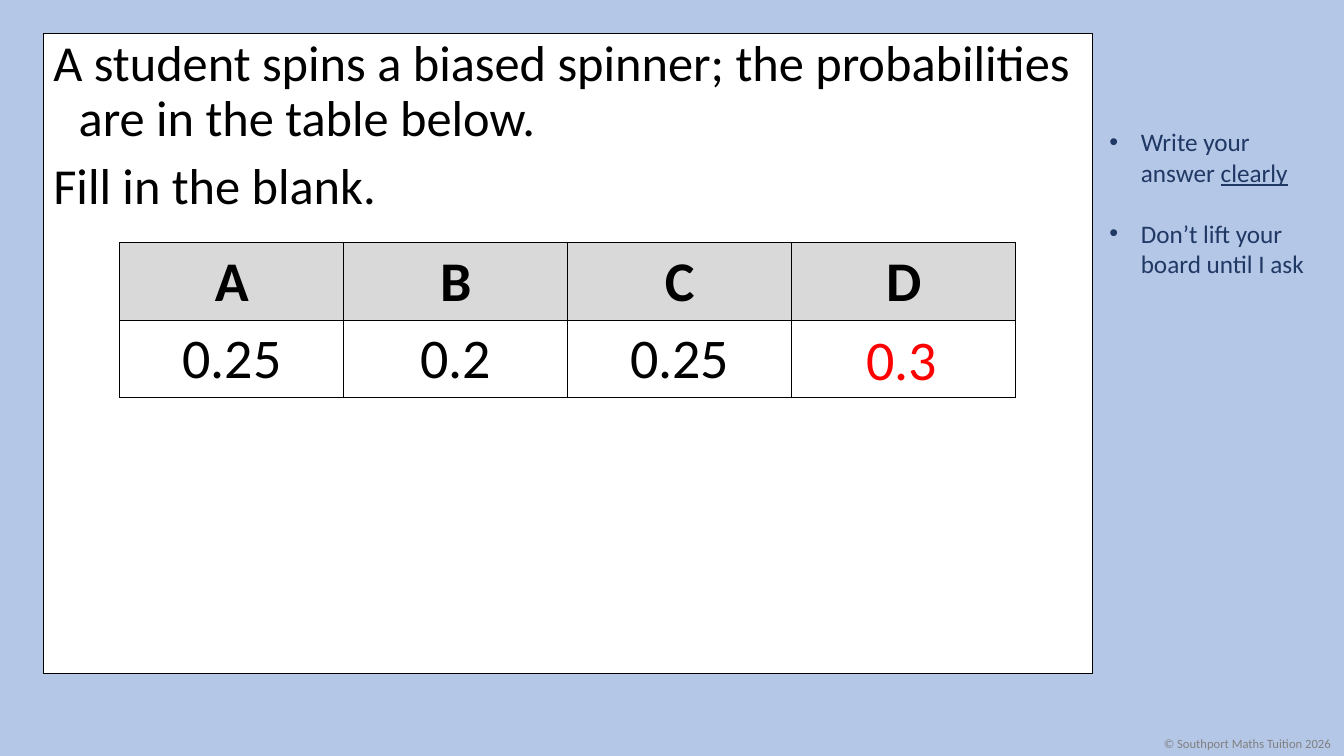
from lxml.etree import SubElement
from pptx import Presentation
from pptx.dml.color import RGBColor
from pptx.enum.shapes import MSO_SHAPE
from pptx.enum.text import MSO_ANCHOR, PP_ALIGN
from pptx.oxml.ns import qn
from pptx.util import Cm, Pt

COLORS = {
    "background": "B4C7E7",
    "panel": "FFFFFF",
    "header": "D9D9D9",
    "text": "000000",
    "reminder": "203864",
    "copyright": "808080",
    "answer": "FF0000",
}
PANEL = (1.09, 0.84, 26.44, 16.13)
SPINNER = [("A", "B", "C", "D"), ("0.25", "0.2", "0.25", "")]


def rgb(name):
    return RGBColor.from_string(COLORS[name])


def set_bullet(p, indent, char=None):
    """Give p a hanging indent in cm, with a bullet if char is given."""
    pPr = p._p.get_or_add_pPr()
    pPr.set("marL", str(Cm(indent)))
    pPr.set("indent", str(-Cm(indent)))
    if char:
        SubElement(pPr, qn("a:buFont"), typeface="Arial")
        SubElement(pPr, qn("a:buChar"), char=char)
    else:
        SubElement(pPr, qn("a:buNone"))


def set_borders(cell):
    tcPr = cell._tc.get_or_add_tcPr()
    for side in ("lnL", "lnR", "lnT", "lnB"):
        ln = SubElement(tcPr, qn(f"a:{side}"), w=str(Pt(1)))
        fill = SubElement(ln, qn("a:solidFill"))
        SubElement(fill, qn("a:srgbClr"), val=COLORS["text"])


class SlideBuilder:
    font = "Calibri"

    def __init__(self, s):
        self.s = s
        fill = s.background.fill
        fill.solid()
        fill.fore_color.rgb = rgb("background")

    def add_run(self, p, text, size, color, **formats):
        r = p.add_run()
        r.text = text
        formats = {"name": self.font, "size": Pt(size), **formats}
        for name, value in formats.items():
            setattr(r.font, name, value)
        r.font.color.rgb = rgb(color)

    def add_panel(self, box):
        """Draw the white board behind the body placeholder."""
        sp = self.s.shapes.add_shape(MSO_SHAPE.RECTANGLE, *map(Cm, box))
        sp.shadow.inherit = False
        sp.fill.solid()
        sp.fill.fore_color.rgb = rgb("panel")
        sp.line.color.rgb = rgb("text")
        sp.line.width = Pt(1)
        self.s.placeholders[1].element.addprevious(sp.element)

    def fill_body(self, box, lines):
        body = self.s.placeholders[1]
        body.left, body.top, body.width, body.height = map(Cm, box)
        tf = body.text_frame
        tf.vertical_anchor = MSO_ANCHOR.TOP
        for i, line in enumerate(lines):
            p = tf.add_paragraph() if i else tf.paragraphs[0]
            set_bullet(p, 0.64)
            p.line_spacing = 0.9
            p.space_before = Pt(10 if i else 0)
            self.add_run(p, line, 36, "text")

    def add_text(self, box, text, size, color, align=PP_ALIGN.LEFT, wrap=True):
        tf = self.s.shapes.add_textbox(*map(Cm, box)).text_frame
        tf.word_wrap = wrap
        p = tf.paragraphs[0]
        p.alignment = align
        self.add_run(p, text, size, color)

    def add_reminders(self, box, reminders):
        """Add a bulleted list; each reminder is a list of (text, underlined)."""
        tf = self.s.shapes.add_textbox(*map(Cm, box)).text_frame
        tf.word_wrap = True
        for i, parts in enumerate(reminders):
            p = tf.add_paragraph() if i else tf.paragraphs[0]
            set_bullet(p, 0.79, "•")
            p.space_before = Pt(22 if i else 0)
            for text, underline in parts:
                self.add_run(p, text, 18, "reminder", underline=underline)

    def add_table(self, box, rows):
        table = self.s.shapes.add_table(
            len(rows), len(rows[0]), *map(Cm, box)).table
        for i, row in enumerate(rows):
            for j, text in enumerate(row):
                cell = table.cell(i, j)
                set_borders(cell)
                if i == 0:
                    cell.fill.solid()
                    cell.fill.fore_color.rgb = rgb("header")
                else:
                    cell.fill.background()
                if text:
                    p = cell.text_frame.paragraphs[0]
                    p.alignment = PP_ALIGN.CENTER
                    self.add_run(p, text, 40, "text", bold=i == 0)


def main():
    prs = Presentation()
    prs.slide_width, prs.slide_height = Cm(33.87), Cm(19.05)
    s = prs.slides.add_slide(prs.slide_layouts[1])
    title = s.shapes.title.element
    title.getparent().remove(title)

    builder = SlideBuilder(s)
    builder.add_panel(PANEL)
    builder.fill_body(PANEL, [
        "A student spins a biased spinner; the probabilities are in the table below.",
        "Fill in the blank.",
    ])
    builder.add_reminders((27.71, 3.07, 5.89, 4.11), [
        [("Write your answer ", False), ("clearly", True)],
        [("Don’t lift your board until I ask", False)],
    ])
    builder.add_text((29.08, 18.42, 4.78, 0.64),
                     "© Southport Maths Tuition 2026", 9, "copyright", wrap=False)
    builder.add_table((3.02, 6.12, 22.58, 3.9), SPINNER)
    builder.add_text((21.01, 8.05, 3.43, 1.96), "0.3", 40, "answer",
                     PP_ALIGN.CENTER)
    prs.save("out.pptx")


if __name__ == "__main__":
    main()
